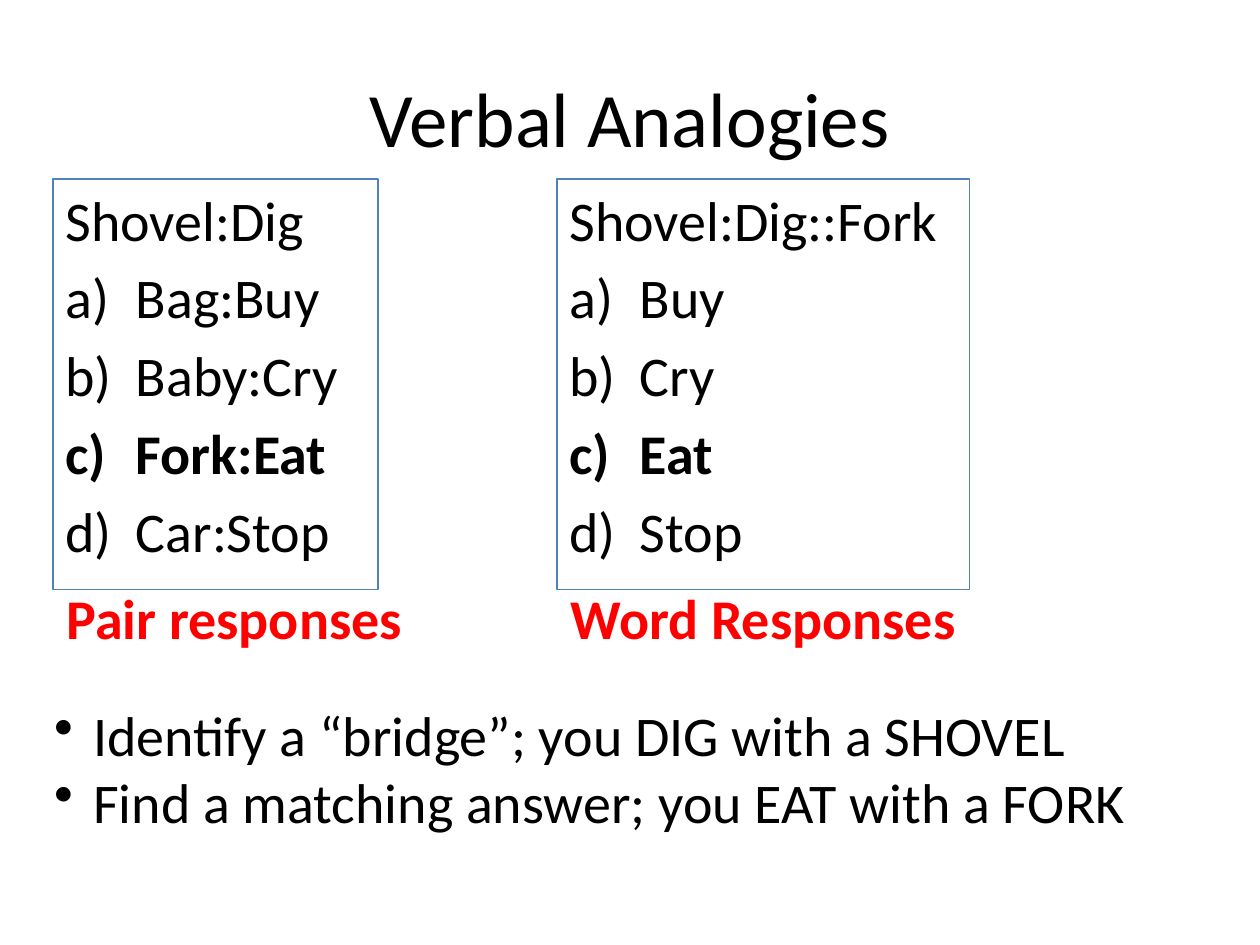
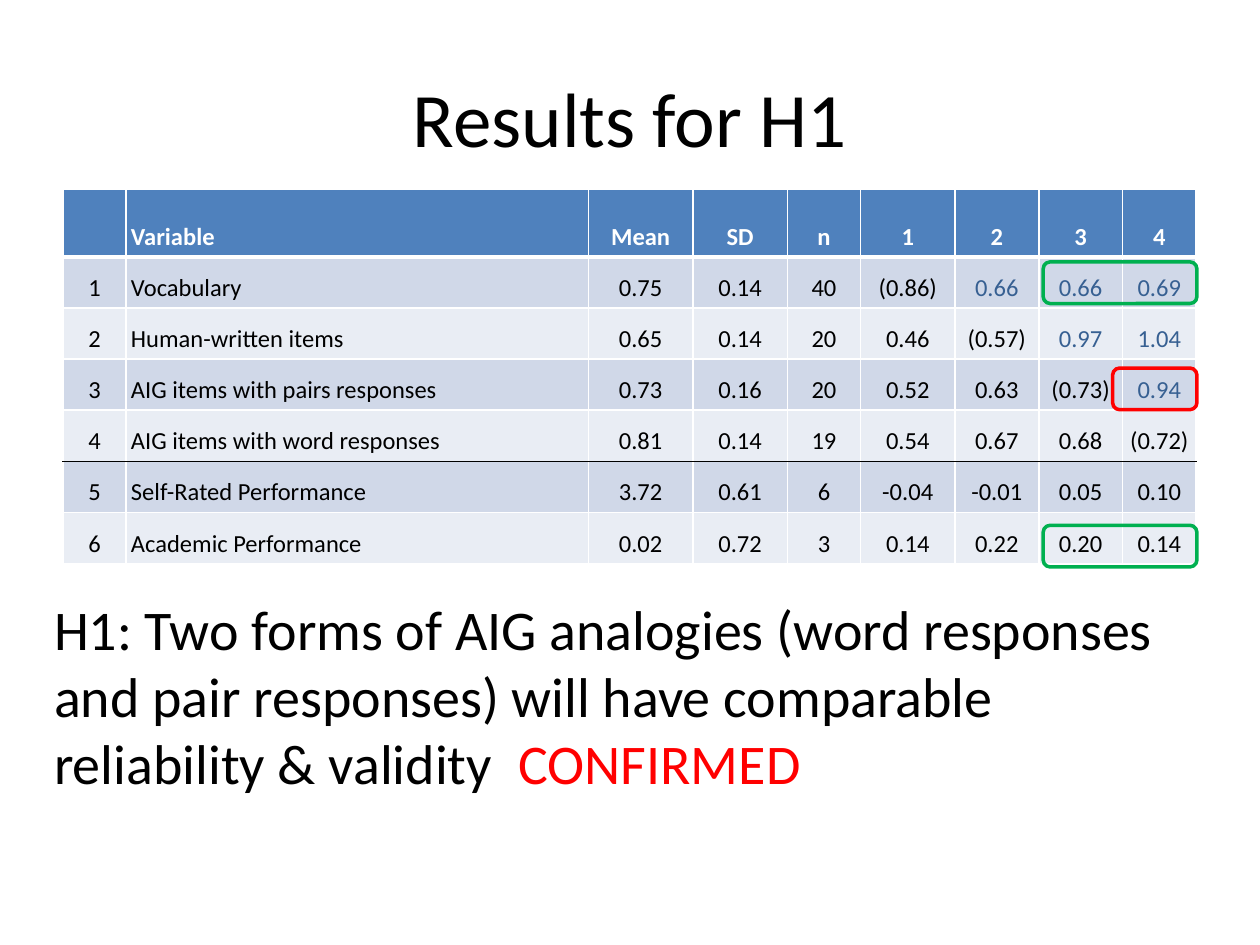
"""Build two slides on verbal analogies: the item formats and the results for H1."""
from lxml import etree
from pptx import Presentation
from pptx import util as u
from pptx.dml.color import RGBColor
from pptx.enum import shapes, text
from pptx.oxml import ns

Cm, Pt = u.Cm, u.Pt
FONT = "Calibri"
BLACK = RGBColor(0x00, 0x00, 0x00)
WHITE = RGBColor(0xFF, 0xFF, 0xFF)
RED = RGBColor(0xFF, 0x00, 0x00)
GREEN = RGBColor(0x00, 0xB0, 0x50)
BLUE = RGBColor(0x4F, 0x81, 0xBD)
DARK_BLUE = RGBColor(0x37, 0x60, 0x92)
BANDS = (RGBColor(0xE9, 0xED, 0xF4), RGBColor(0xD0, 0xD8, 0xE8))
LEFT, CENTER = text.PP_ALIGN.LEFT, text.PP_ALIGN.CENTER
LAST_TEST_ROW = 4
FIRST_CORRELATION = 5

RESULTS = [
    ["", "Variable", "Mean", "SD", "n", "1", "2", "3", "4"],
    ["1", "Vocabulary", "0.75", "0.14", "40", "(0.86)", "0.66", "0.66", "0.69"],
    ["2", "Human-written items", "0.65", "0.14", "20", "0.46", "(0.57)", "0.97", "1.04"],
    ["3", "AIG items with pairs responses", "0.73", "0.16", "20", "0.52", "0.63", "(0.73)", "0.94"],
    ["4", "AIG items with word responses", "0.81", "0.14", "19", "0.54", "0.67", "0.68", "(0.72)"],
    ["5", "Self-Rated Performance", "3.72", "0.61", "6", "-0.04", "-0.01", "0.05", "0.10"],
    ["6", "Academic Performance", "0.02", "0.72", "3", "0.14", "0.22", "0.20", "0.14"],
]
COLUMN_WIDTHS = [1.27, 9.32, 2.11, 1.9, 1.48, 1.9, 1.69, 1.69, 1.48]
ROW_HEIGHTS = [1.37] + [1.03] * 6


def add_element(parent, tag, **attributes):
    return etree.SubElement(parent, ns.qn(tag), attributes)


class Deck:
    def __init__(self):
        self.prs = Presentation()
        self.prs.slide_width, self.prs.slide_height = Cm(25.4), Cm(19.05)
        self.s = None

    def style(self, p, size=32, color=BLACK, bold=False):
        for r in p.runs:
            r.font.name, r.font.size = FONT, Pt(size)
            r.font.color.rgb, r.font.bold = color, bold

    def list_item(self, p, indent, tag, **attributes):
        pPr = p._p.get_or_add_pPr()
        pPr.set("marL", str(Cm(indent)))
        pPr.set("indent", str(-Cm(indent)))
        add_element(pPr, tag, **attributes)

    def slide(self, title):
        self.s = self.prs.slides.add_slide(self.prs.slide_layouts[5])
        sp = self.s.shapes.title
        sp.left, sp.top, sp.width, sp.height = Cm(1.27), Cm(0.76), Cm(22.86), Cm(3.18)
        sp.text_frame.text = title
        sp.text_frame.vertical_anchor = text.MSO_ANCHOR.MIDDLE
        p = sp.text_frame.paragraphs[0]
        p.alignment = CENTER
        self.style(p, 44)

    def text_box(self, x, y, w, h, *lines, wrap=True, **style):
        sp = self.s.shapes.add_textbox(Cm(x), Cm(y), Cm(w), Cm(h))
        tf = sp.text_frame
        tf.text, tf.word_wrap = "\n".join(lines), wrap
        for p in tf.paragraphs:
            self.style(p, **style)
        return tf

    def outline(self, kind, x, y, w, h, color, width):
        sp = self.s.shapes.add_shape(kind, Cm(x), Cm(y), Cm(w), Cm(h))
        sp.shadow.inherit = False
        sp.fill.background()
        sp.line.color.rgb, sp.line.width = color, Pt(width)
        return sp

    def question(self, x, w, stem, choices, answer):
        sp = self.outline(shapes.MSO_SHAPE.RECTANGLE, x, 3.61, w, 8.27, BLUE, 0.75)
        tf = sp.text_frame
        tf.text, tf.word_wrap = "\n".join([stem] + choices), True
        tf.vertical_anchor = text.MSO_ANCHOR.TOP
        for i, p in enumerate(tf.paragraphs):
            p.alignment = LEFT
            if i:
                p.space_before = Pt(6)
                self.list_item(p, 1.42, "a:buAutoNum", type="alphaLcParenR")
            self.style(p, bold=p.text == answer)

    def borders(self, cell, **sides):
        tcPr = cell._tc.get_or_add_tcPr()
        for i, side in enumerate("LRTB"):
            color, width = sides.get(side, (WHITE, 1))
            ln = etree.Element(ns.qn("a:ln" + side), w=str(Pt(width)))
            add_element(add_element(ln, "a:solidFill"), "a:srgbClr", val=str(color))
            tcPr.insert(i, ln)

    def results_table(self, x, y, rows):
        frame = self.s.shapes.add_table(len(rows), len(rows[0]), Cm(x), Cm(y),
                                        Cm(sum(COLUMN_WIDTHS)), Cm(sum(ROW_HEIGHTS)))
        table = frame.table
        for column, w in zip(table.columns, COLUMN_WIDTHS):
            column.width = Cm(w)
        for i, (row, h) in enumerate(zip(table.rows, ROW_HEIGHTS)):
            row.height = Cm(h)
            for j, cell in enumerate(row.cells):
                self.result_cell(cell, i, j, rows[i][j])

    def result_cell(self, cell, i, j, value):
        header = i == 0
        corrected = i <= LAST_TEST_ROW and j - FIRST_CORRELATION >= i
        cell.fill.solid()
        cell.fill.fore_color.rgb = BLUE if header else BANDS[i % 2]
        cell.margin_left = cell.margin_right = cell.margin_top = cell.margin_bottom = Cm(0.1)
        cell.vertical_anchor = text.MSO_ANCHOR.BOTTOM
        cell.text_frame.text = value
        p = cell.text_frame.paragraphs[0]
        p.alignment = LEFT if j == 1 else CENTER
        p.space_after = Pt(5.8)
        color = WHITE if header else DARK_BLUE if corrected else BLACK
        self.style(p, 14, color, header)
        sides = {0: {"B": (WHITE, 3)}, 1: {"T": (WHITE, 3)},
                 LAST_TEST_ROW: {"B": (BLACK, 1)}, LAST_TEST_ROW + 1: {"T": (BLACK, 1)}}
        self.borders(cell, **sides.get(i, {}))


def analogies_slide(deck):
    deck.slide("Verbal Analogies")
    deck.question(1.07, 6.55, "Shovel:Dig",
                  ["Bag:Buy", "Baby:Cry", "Fork:Eat", "Car:Stop"], "Fork:Eat")
    deck.question(11.23, 8.31, "Shovel:Dig::Fork", ["Buy", "Cry", "Eat", "Stop"], "Eat")
    steps = deck.text_box(0.84, 14, 23.16, 3,
                          "Identify a “bridge”; you DIG with a SHOVEL",
                          "Find a matching answer; you EAT with a FORK")
    for p in steps.paragraphs:
        deck.list_item(p, 0.79, "a:buChar", char="•")
    captions = deck.text_box(1.09, 11.63, 18.59, 1.63, "Pair responses\t\tWord Responses",
                             wrap=False, color=RED, bold=True)
    tabs = add_element(captions.paragraphs[0]._p.get_or_add_pPr(), "a:tabLst")
    for stop in (7.62, 10.16):
        add_element(tabs, "a:tab", pos=str(Cm(stop)), algn="l")


def results_slide(deck):
    deck.slide("Results for H1")
    deck.results_table(1.27, 3.81, RESULTS)
    tf = deck.text_box(0.84, 11.86, 23.29, 5.13,
                       "H1: Two forms of AIG analogies (word responses and pair responses) "
                       "will have comparable reliability & validity  ")
    p = tf.paragraphs[0]
    r = p.add_run()
    r.text = "CONFIRMED"
    deck.style(p)
    r.font.color.rgb = RED
    for x, y, w, color in ((22.43, 7.42, 1.7, RED), (21.03, 5.28, 3.1, GREEN),
                           (21.03, 10.59, 3.1, GREEN)):
        deck.outline(shapes.MSO_SHAPE.ROUNDED_RECTANGLE, x, y, w, 0.84, color, 2)


def main():
    deck = Deck()
    analogies_slide(deck)
    results_slide(deck)
    deck.prs.save("out.pptx")


if __name__ == "__main__":
    main()
